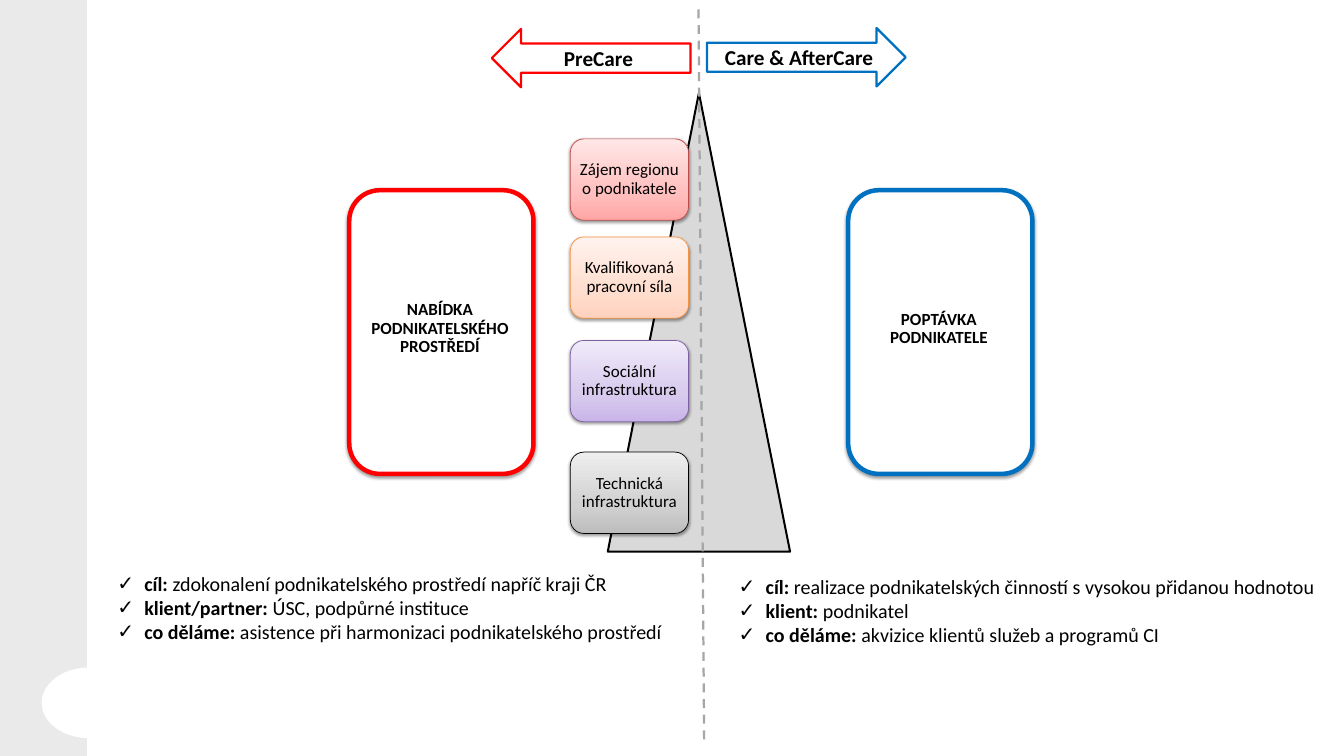
from lxml import etree
from pptx import Presentation
from pptx.dml.color import RGBColor
from pptx.enum.dml import MSO_LINE
from pptx.enum.shapes import MSO_CONNECTOR, MSO_SHAPE
from pptx.enum.text import MSO_ANCHOR, PP_ALIGN
from pptx.oxml import parse_xml
from pptx.oxml.ns import nsdecls, qn
from pptx.util import Cm, Pt

RECT, OVAL = MSO_SHAPE.RECTANGLE, MSO_SHAPE.OVAL
ROUNDED, TRIANGLE = MSO_SHAPE.ROUNDED_RECTANGLE, MSO_SHAPE.ISOSCELES_TRIANGLE
LEFT_ARROW, RIGHT_ARROW = MSO_SHAPE.LEFT_ARROW, MSO_SHAPE.RIGHT_ARROW
STRAIGHT, DASH = MSO_CONNECTOR.STRAIGHT, MSO_LINE.DASH
CENTER, MIDDLE = PP_ALIGN.CENTER, MSO_ANCHOR.MIDDLE

BLACK = RGBColor(0x00, 0x00, 0x00)
WHITE = RGBColor(0xFF, 0xFF, 0xFF)
STRIP_GRAY = RGBColor(0xEA, 0xEA, 0xEA)
TRIANGLE_GRAY = RGBColor(0xD9, 0xD9, 0xD9)
DASH_GRAY = RGBColor(0xA6, 0xA6, 0xA6)
RED = RGBColor(0xFF, 0x00, 0x00)
BLUE = RGBColor(0x00, 0x70, 0xC0)
CARD_RED = RGBColor(0xBF, 0x4C, 0x48)
CARD_ORANGE = RGBColor(0xF6, 0x92, 0x40)
CARD_PURPLE = RGBColor(0x7D, 0x60, 0xA0)

# Content; all lengths are in centimetres
SLIDE_WIDTH, SLIDE_HEIGHT = 47.41, 26.67

# top, label, outline, gradient from bottom to top
CARDS = [
    (4.9, "Zájem regionu o podnikatele", CARD_RED, ("FFA6A5", "FFC0BF", "FFE7E7")),
    (8.36, "Kvalifikovaná pracovní síla", CARD_ORANGE, ("FFD2BD", "FFDED0", "FFF2ED")),
    (12.01, "Sociální infrastruktura", CARD_PURPLE, ("C9B5E8", "D8CBEE", "F0EAF9")),
    (15.95, "Technická infrastruktura", BLACK, ("BDBDBD", "D1D1D1", "EEEEEE")),
]
CARD_LEFT, CARD_WIDTH, CARD_HEIGHT = 20.12, 4.17, 2.87
GRADIENT_STOPS = (0, 35, 100)

PANELS = [
    (12.32, "NABÍDKA PODNIKATELSKÉHO PROSTŘEDÍ", RED),
    (29.92, "POPTÁVKA PODNIKATELE", BLUE),
]
PANEL_TOP, PANEL_WIDTH, PANEL_HEIGHT = 6.71, 6.5, 10.01

ARROWS = [
    (LEFT_ARROW, 17.35, 1.02, "PreCare", RED),
    (RIGHT_ARROW, 24.94, 0.99, "Care & AfterCare", BLUE),
]
ARROW_WIDTH, ARROW_HEIGHT = 7.01, 2.06

NOTES = [
    (25.81, 20.14, 21.03, [
        ("cíl: ", "realizace podnikatelských činností s vysokou přidanou hodnotou"),
        ("klient:", " podnikatel"),
        ("co děláme: ", "akvizice klientů služeb a programů CI"),
    ]),
    (3.89, 20.04, 20.24, [
        ("cíl: ", "zdokonalení podnikatelského prostředí napříč kraji ČR"),
        ("klient/partner:", " ÚSC, podpůrné instituce"),
        ("co děláme: ", "asistence při harmonizaci podnikatelského prostředí"),
    ]),
]
NOTE_HEIGHT, NOTE_INDENT = 2.82, 0.95

deck = Presentation()
deck.slide_width, deck.slide_height = Cm(SLIDE_WIDTH), Cm(SLIDE_HEIGHT)
page = deck.slides.add_slide(deck.slide_layouts[6])


def apply(target, **values):
    for name, value in values.items():
        setattr(target, name, value)


def add_span(para, text, size, bold):
    span = para.add_run()
    span.text = text
    apply(span.font, size=Pt(size), bold=bold, name="Calibri")
    span.font.color.rgb = BLACK


def add_shape(kind, place, fill, outline=None, weight=1):
    shape = page.shapes.add_shape(kind, *map(Cm, place))
    shape.shadow.inherit = False
    shape.fill.solid()
    shape.fill.fore_color.rgb = fill
    if outline is None:
        shape.line.fill.background()
    else:
        shape.line.color.rgb = outline
        shape.line.width = Pt(weight)
    return shape


def add_label(shape, text, size, bold, spacing=1.0):
    frame = shape.text_frame
    apply(frame, word_wrap=True, vertical_anchor=MIDDLE)
    para = frame.paragraphs[0]
    apply(para, alignment=CENTER, line_spacing=spacing)
    add_span(para, text, size, bold)
    return frame


def add_soft_shadow(shape):
    effects = shape._element.spPr.find(qn("a:effectLst"))
    effects.append(parse_xml(
        f'<a:outerShdw {nsdecls("a")} blurRad="{Pt(3.1)}" dist="{Pt(1.6)}" dir="5400000" '
        'rotWithShape="0"><a:srgbClr val="000000"><a:alpha val="38000"/></a:srgbClr></a:outerShdw>'))


def set_gradient(shape, colors):
    """Fill upwards with three colours."""
    shape.fill.gradient()
    shape.fill.gradient_angle = 90
    stops = shape._element.spPr.find(qn("a:gradFill")).find(qn("a:gsLst"))
    for stop in list(stops):
        stops.remove(stop)
    for position, color in zip(GRADIENT_STOPS, colors):
        stop = etree.SubElement(stops, qn("a:gs"), pos=str(position * 1000))
        etree.SubElement(stop, qn("a:srgbClr"), val=color)


def add_check_bullet(para):
    properties = para._p.get_or_add_pPr()
    properties.set("marL", str(Cm(NOTE_INDENT)))
    properties.set("indent", str(-Cm(NOTE_INDENT)))
    etree.SubElement(properties, qn("a:buFont"), typeface="Arial")
    etree.SubElement(properties, qn("a:buChar"), char="✓")


add_shape(RECT, (0, 0, 3.07, SLIDE_HEIGHT), STRIP_GRAY)
add_shape(OVAL, (1.47, 23.55, 3.33, 2.49), WHITE)
add_shape(TRIANGLE, (21.44, 3.28, 6.43, 16.18), TRIANGLE_GRAY, BLACK, 2)

for top, text, outline, colors in CARDS:
    card = add_shape(ROUNDED, (CARD_LEFT, top, CARD_WIDTH, CARD_HEIGHT), WHITE, outline, 0.75)
    set_gradient(card, colors)
    add_soft_shadow(card)
    frame = add_label(card, text, 17, False, 0.9)
    apply(frame, margin_left=Cm(0.19), margin_right=Cm(0.19))

for left, text, outline in PANELS:
    panel = add_shape(ROUNDED, (left, PANEL_TOP, PANEL_WIDTH, PANEL_HEIGHT), WHITE, outline, 4.5)
    add_soft_shadow(panel)
    frame = add_label(panel, text, 17, True, 0.9)
    apply(frame, margin_left=Cm(0.2), margin_right=Cm(0.3), margin_bottom=Cm(0.35))

divider = page.shapes.add_connector(STRAIGHT, Cm(24.64), Cm(0.33), Cm(24.84), Cm(26.26))
divider.line.color.rgb = DASH_GRAY
apply(divider.line, width=Pt(2.25), dash_style=DASH)
etree.SubElement(divider._element.spPr, qn("a:effectLst"))

for kind, left, top, text, outline in ARROWS:
    arrow = add_shape(kind, (left, top, ARROW_WIDTH, ARROW_HEIGHT), WHITE, outline, 2.25)
    add_label(arrow, text, 21.2, True)

for left, top, width, items in NOTES:
    frame = page.shapes.add_textbox(Cm(left), Cm(top), Cm(width), Cm(NOTE_HEIGHT)).text_frame
    frame.word_wrap = True
    for index, (heading, detail) in enumerate(items):
        para = frame.add_paragraph() if index else frame.paragraphs[0]
        add_check_bullet(para)
        add_span(para, heading, 20, True)
        add_span(para, detail, 20, False)

deck.save("out.pptx")
